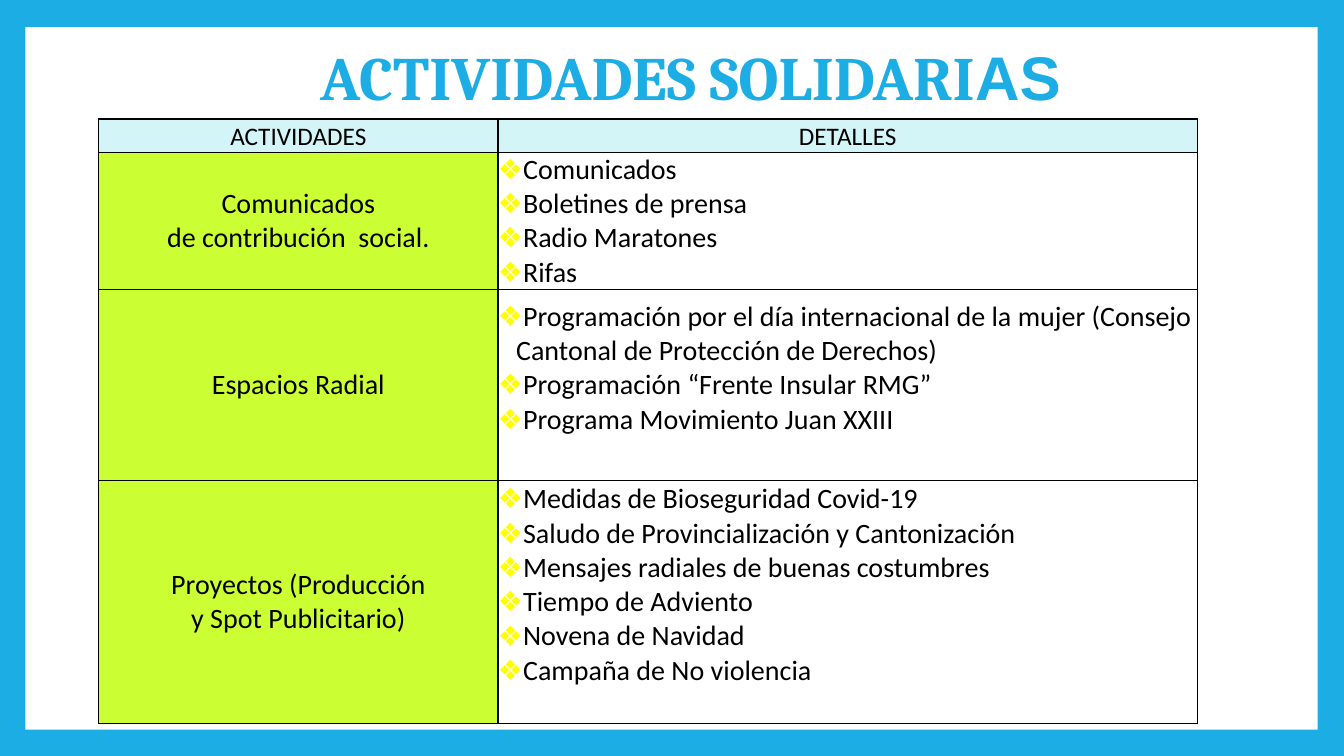
from lxml.etree import SubElement
from pptx import Presentation
from pptx.dml.color import RGBColor
from pptx.enum.shapes import MSO_SHAPE
from pptx.enum.text import MSO_ANCHOR, PP_ALIGN
from pptx.oxml.ns import qn
from pptx.util import Inches, Pt

BLUE, WHITE, BLACK = "1CADE4", "FFFFFF", "000000"
AQUA, LIME, YELLOW = "D4F5F7", "CCFF33", "FFFF00"

ROWS = [
    (["Comunicados", "de contribución  social."],
     ["Comunicados", "Boletines de prensa", "Radio Maratones", "Rifas"], 0),
    (["Espacios Radial"],
     ["Programación por el día internacional de la mujer "
      "(Consejo Cantonal de Protección de Derechos)",
      "Programación “Frente Insular RMG”",
      "Programa Movimiento Juan XXIII"], 4.5),
    (["Proyectos (Producción", "y Spot Publicitario)"],
     ["Medidas de Bioseguridad Covid-19",
      "Saludo de Provincialización y Cantonización",
      "Mensajes radiales de buenas costumbres",
      "Tiempo de Adviento", "Novena de Navidad",
      "Campaña de No violencia"], 4.5),
]


def rgb(value):
    return RGBColor.from_string(value)


class SlideBuilder:
    """Draws styled elements on a slide, placed in percent of its size."""

    def __init__(self, prs, background):
        self.width, self.height = prs.slide_width, prs.slide_height
        self.s = prs.slides.add_slide(prs.slide_layouts[6])
        self.s.background.fill.solid()
        self.s.background.fill.fore_color.rgb = rgb(background)

    def x(self, share):
        return round(self.width * share / 100)

    def y(self, share):
        return round(self.height * share / 100)

    def box(self, left, top, width, height):
        return self.x(left), self.y(top), self.x(width), self.y(height)

    def style(self, r, font, size, color, bold=False):
        r.font.name, r.font.size, r.font.bold = font, Pt(size), bold
        r.font.color.rgb = rgb(color)

    def panel(self, place, color):
        sp = self.s.shapes.add_shape(MSO_SHAPE.RECTANGLE, *self.box(*place))
        sp.shadow.inherit = False
        sp.fill.solid()
        sp.fill.fore_color.rgb = rgb(color)
        sp.line.fill.background()

    def title(self, place, parts):
        tf = self.s.shapes.add_textbox(*self.box(*place)).text_frame
        tf.word_wrap = True
        p = tf.paragraphs[0]
        p.alignment = PP_ALIGN.CENTER
        for text, font in parts:
            r = p.add_run()
            r.text = text
            self.style(r, font, 44, BLUE, True)

    def table(self, left, top, widths, heights):
        place = self.box(left, top, sum(widths), sum(heights))
        table = self.s.shapes.add_table(len(heights), len(widths), *place).table
        table.first_row = table.horz_banding = False
        for column, width in zip(table.columns, widths):
            column.width = self.x(width)
        for row, height in zip(table.rows, heights):
            row.height = self.y(height)
        return table

    def cell(self, cell, lines, size=20, fill=None, anchor=MSO_ANCHOR.MIDDLE,
             bullets=False, bottom=0):
        cell.margin_left = cell.margin_right = cell.margin_top = 0
        cell.margin_bottom = self.y(bottom)
        cell.vertical_anchor = anchor
        self.borders(cell)
        if fill:
            cell.fill.solid()
            cell.fill.fore_color.rgb = rgb(fill)
        else:
            cell.fill.background()
        cell.text_frame.text = "\n".join(lines)
        for p in cell.text_frame.paragraphs:
            p.alignment = PP_ALIGN.LEFT if bullets else PP_ALIGN.CENTER
            self.style(p.runs[0], "Calibri", size, BLACK)
            if bullets:
                self.bullet(p)

    def borders(self, cell):
        tcPr = cell._tc.get_or_add_tcPr()
        for side in ("a:lnL", "a:lnR", "a:lnT", "a:lnB"):
            ln = SubElement(tcPr, qn(side), w=str(Pt(1)))
            fill = SubElement(ln, qn("a:solidFill"))
            SubElement(fill, qn("a:srgbClr"), val=BLACK)

    def bullet(self, p):
        pPr = p._p.get_or_add_pPr()
        indent = self.x(1.35)
        pPr.set("marL", str(indent))
        pPr.set("indent", str(-indent))
        color = SubElement(pPr, qn("a:buClr"))
        SubElement(color, qn("a:srgbClr"), val=YELLOW)
        SubElement(pPr, qn("a:buFont"), typeface="Arial")
        SubElement(pPr, qn("a:buChar"), char="❖")


def main():
    prs = Presentation()
    prs.slide_width, prs.slide_height = Inches(13.33), Inches(7.5)
    slide = SlideBuilder(prs, BLUE)
    slide.panel((1.88, 3.6, 96.15, 92.93), WHITE)
    table = slide.table(7.35, 15.73, [29.7, 52.05], [4.4, 18.2, 25.2, 32.2])
    for i, heading in enumerate(["ACTIVIDADES", "DETALLES"]):
        slide.cell(table.cell(0, i), [heading], 18, AQUA, MSO_ANCHOR.BOTTOM)
    for i, (activity, details, bottom) in enumerate(ROWS, 1):
        slide.cell(table.cell(i, 0), activity, fill=LIME)
        slide.cell(table.cell(i, 1), details, bullets=True, bottom=bottom)
    slide.title((17.78, 4.53, 67.2, 11.2),
                [("ACTIVIDADES SOLIDARI", "Cambria"), ("AS", "Arial")])
    prs.save("out.pptx")


if __name__ == "__main__":
    main()
